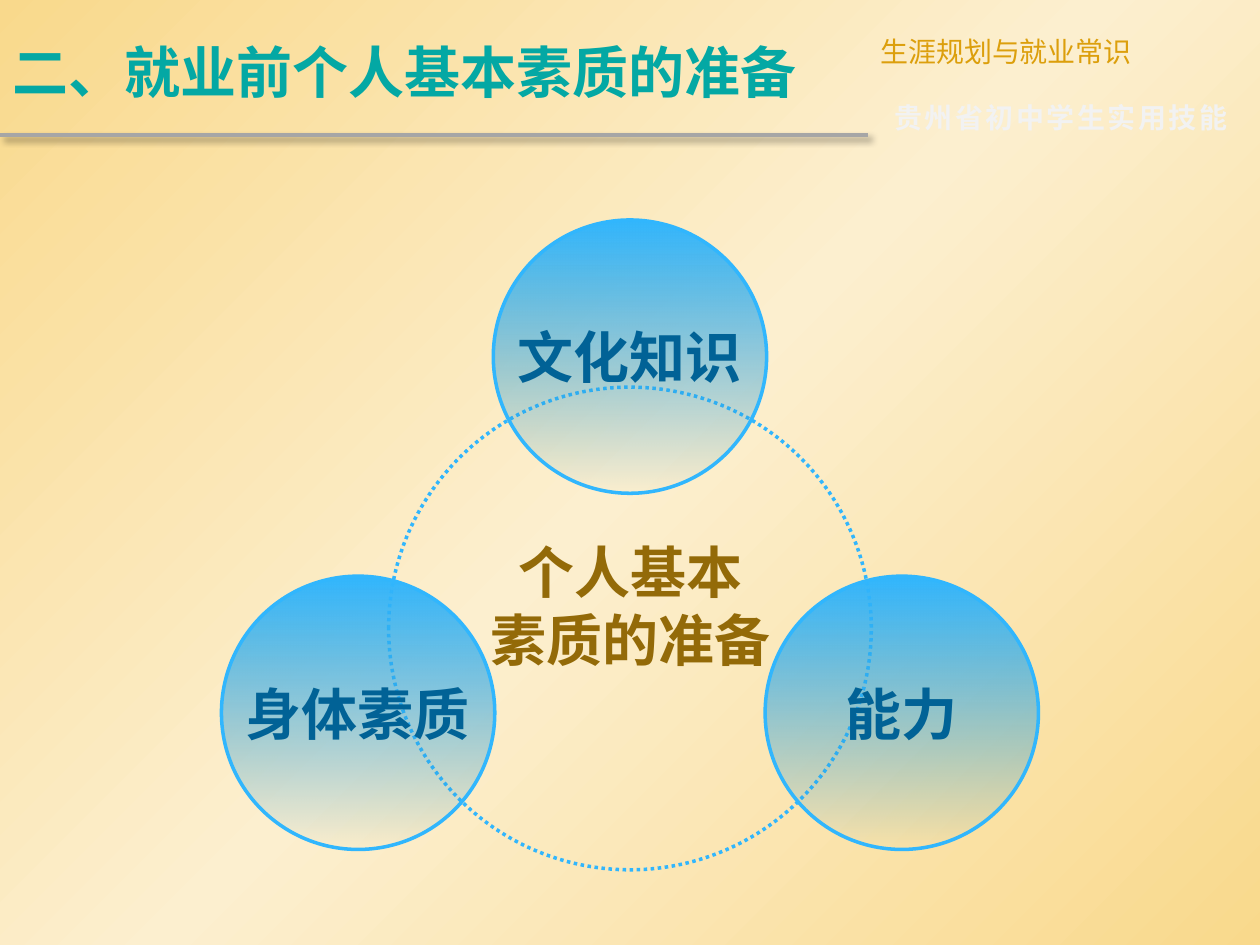
"""Build a slide with three circles around the basics of preparing for work."""
from lxml import etree
from pptx import Presentation
from pptx.dml.color import RGBColor
from pptx.enum.dml import MSO_LINE_DASH_STYLE as Dash
from pptx.enum.shapes import MSO_CONNECTOR as Conn, MSO_SHAPE as Shape
from pptx.enum.text import MSO_ANCHOR as Anchor, MSO_AUTO_SIZE as Auto, PP_ALIGN as Align
from pptx.oxml.ns import qn
from pptx.util import Cm, Pt


def rgb(value):
    return RGBColor.from_string(value)


def add(parent, tag, **attrs):
    return etree.SubElement(parent, qn(tag), {k: str(v) for k, v in attrs.items()})


class Deck:
    font = "Noto Sans CJK SC"
    blue = "31B6FD"

    def __init__(self, prs):
        self.s = prs.slides.add_slide(prs.slide_layouts[6])

    def gradient(self, fill, root, stops, angle):
        fill.gradient()
        fill.gradient_angle = 360 - angle
        gs_list = root.find(".//" + qn("a:gsLst"))
        gs_list.clear()
        for pos, color, alpha in stops:
            gs = add(gs_list, "a:gs", pos=pos * 1000)
            clr = add(gs, "a:srgbClr", val=color)
            if alpha < 100:
                add(clr, "a:alpha", val=alpha * 1000)

    def background(self, edge, middle):
        stops = [(0, edge, 100), (50, middle, 100), (100, edge, 100)]
        self.gradient(self.s.background.fill, self.s.element, stops, 45)

    def put_lines(self, sp, lines, color, size=32, bold=True, align=Align.CENTER,
                  anchor=Anchor.MIDDLE, wrap=False, spacing=0):
        tf = sp.text_frame
        tf.word_wrap = wrap
        tf.vertical_anchor = anchor
        for i, line in enumerate(lines):
            p = tf.paragraphs[0] if i == 0 else tf.add_paragraph()
            p.alignment = align
            r = p.add_run()
            r.text = line
            r.font.size = Pt(size)
            r.font.bold = bold
            r.font.name = self.font
            r.font.color.rgb = rgb(color)
            r_pr = r.font._element
            add(r_pr, "a:ea", typeface=self.font)
            if spacing:
                r_pr.set("spc", str(spacing))

    def text(self, x, y, w, h, lines, color, grow=False, **style):
        sp = self.s.shapes.add_textbox(Cm(x), Cm(y), Cm(w), Cm(h))
        self.put_lines(sp, lines, color, **style)
        if grow:
            sp.text_frame.auto_size = Auto.SHAPE_TO_FIT_TEXT

    def circle(self, cx, cy, d):
        sp = self.s.shapes.add_shape(Shape.OVAL, Cm(cx - d / 2), Cm(cy - d / 2), Cm(d), Cm(d))
        sp.shadow.inherit = False
        sp.fill.background()
        sp.line.color.rgb = rgb(self.blue)
        sp.line.width = Pt(2)
        return sp

    def ring(self, cx, cy, d):
        self.circle(cx, cy, d).line.dash_style = Dash.ROUND_DOT

    def topic(self, cx, cy, d, label):
        sp = self.circle(cx, cy, d)
        self.gradient(sp.fill, sp.element, [(0, self.blue, 100), (100, "2793CC", 0)], 90)
        self.put_lines(sp, [label], "016296")

    def rule(self, y, w):
        ln = self.s.shapes.add_connector(Conn.STRAIGHT, 0, Cm(y), Cm(w), Cm(y))
        ln.line.color.rgb = rgb("A6A6A6")
        ln.line.width = Pt(2.25)
        effects = add(ln._element.spPr, "a:effectLst")
        shadow = add(effects, "a:outerShdw", blurRad=int(Pt(4)), dist=int(Pt(3)),
                     dir=45 * 60000, algn="tl", rotWithShape=0)
        add(add(shadow, "a:srgbClr", val="000000"), "a:alpha", val=40000)


def main():
    prs = Presentation()
    prs.slide_width, prs.slide_height = Cm(25.4), Cm(19.05)
    deck = Deck(prs)
    deck.background("F9D98C", "FCEFCF")

    split = 17.5
    deck.rule(2.72, split)
    deck.text(split, 0.58, 7.9, 0.94, ["生涯规划与就业常识"], "DC9F0C", grow=True, size=16,
              bold=False, align=Align.JUSTIFY, anchor=Anchor.TOP, wrap=True)
    deck.text(17.78, 1.9, 7.5, 0.94, ["贵州省初中学生实用技能"], "F2F2F2", size=16,
              align=Align.LEFT, anchor=Anchor.TOP, spacing=150)
    deck.text(0, 0.13, split, 2.59, ["二、就业前个人基本素质的准备"], "04A8A4",
              align=Align.LEFT, wrap=True)

    cx, cy, reach = 12.7, 12.67, 5.48
    deck.ring(cx, cy, 9.73)
    topics = [(0, -reach, "文化知识"), (-reach, 1.7, "身体素质"), (reach, 1.7, "能力")]
    for dx, dy, label in topics:
        deck.topic(cx + dx, cy + dy, 5.51, label)
    deck.text(9.6, 10.72, 6.22, 3, ["个人基本", "素质的准备"], "936A08", grow=True,
              anchor=Anchor.TOP)
    prs.save("out.pptx")


if __name__ == "__main__":
    main()
